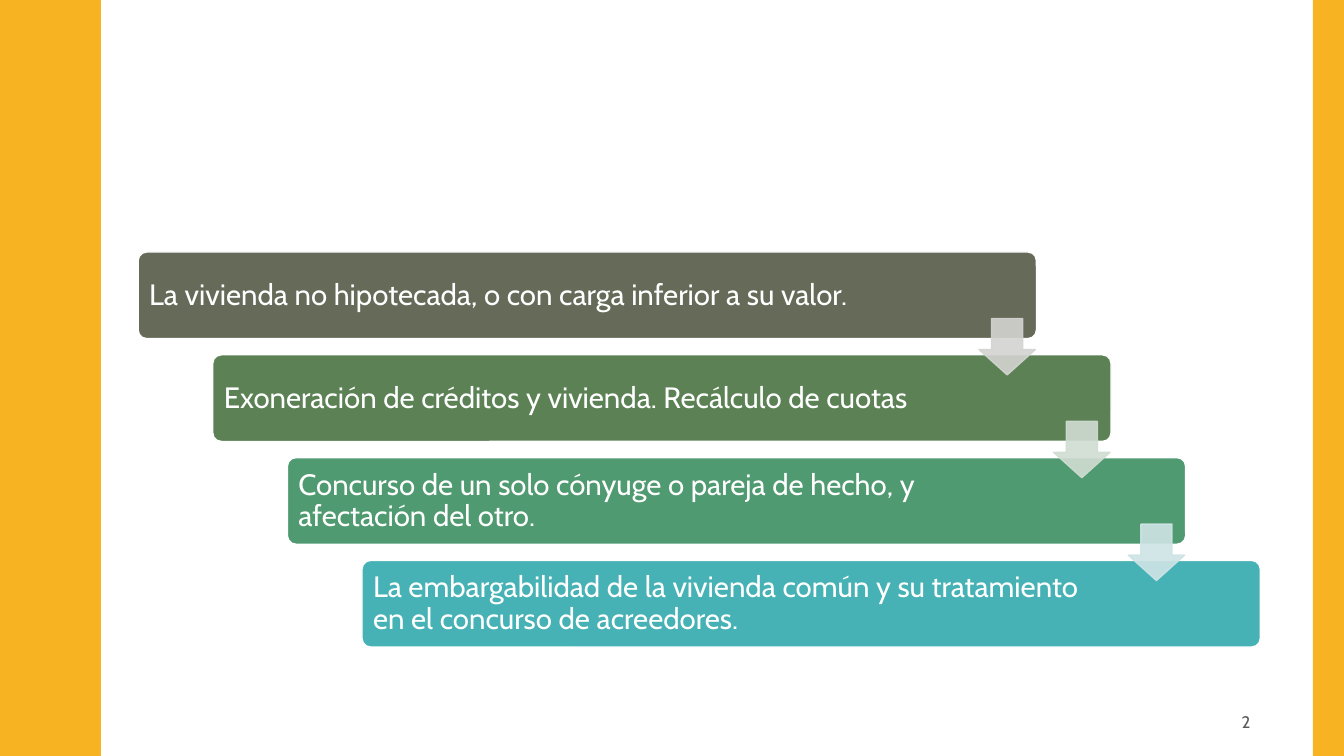
from lxml import etree
from pptx import Presentation
from pptx.dml.color import RGBColor
from pptx.enum.shapes import MSO_SHAPE as Shape
from pptx.enum.text import MSO_ANCHOR as Anchor, PP_ALIGN as Align
from pptx.oxml.ns import qn
from pptx.util import Inches, Pt

GOLD = RGBColor(0xF8, 0xB3, 0x23)
WHITE = RGBColor(0xFF, 0xFF, 0xFF)
GREY = RGBColor(0x59, 0x59, 0x59)
FONT = "Cabin"

# text, text width, bar colour
STEPS = [
    ("La vivienda no hipotecada, o con carga inferior a su valor.",
     7.9, RGBColor(0x65, 0x6A, 0x59)),
    ("Exoneración de créditos y vivienda. Recálculo de cuotas",
     7.55, RGBColor(0x5B, 0x81, 0x55)),
    ("Concurso de un solo cónyuge o pareja de hecho, y afectación del otro.",
     7.56, RGBColor(0x4F, 0x9A, 0x70)),
    ("La embargabilidad de la vivienda común y su tratamiento en el concurso "
     "de acreedores.", 7.55, RGBColor(0x46, 0xB2, 0xB5)),
]
ARROWS = [RGBColor(0xD3, 0xD4, 0xD1), RGBColor(0xD0, 0xDD, 0xD2),
          RGBColor(0xCF, 0xE4, 0xE5)]
LEFT, TOP, DX, DY = 1.37, 2.5, 0.74, 1.02

# Half of one wave; the other half mirrors it
RISE = [(0.78, 0), (0.78, 0.07), (0.79, 0.14), (0.8, 0.2), (0.81, 0.25),
        (0.83, 0.29), (0.85, 0.33), (0.87, 0.38), (0.89, 0.42), (0.91, 0.46),
        (0.93, 0.5), (0.95, 0.55), (0.96, 0.61), (0.97, 0.68), (0.97, 0.75)]
WAVE = 1.5


def add_block(kind, x, y, w, h, fill, edge=None):
    block = slide.shapes.add_shape(
        kind, Inches(x), Inches(y), Inches(w), Inches(h))
    block.shadow.inherit = False
    block.fill.solid()
    block.fill.fore_color.rgb = fill
    if edge is None:
        block.line.fill.background()
    else:
        block.line.color.rgb = edge
        block.line.width = Pt(1)
    return block


def add_label(text, x, y, w, h, size, color):
    box = slide.shapes.add_textbox(Inches(x), Inches(y), Inches(w), Inches(h))
    frame = box.text_frame
    frame.word_wrap = True
    frame.vertical_anchor = Anchor.MIDDLE
    frame.text = text
    font = frame.paragraphs[0].runs[0].font
    font.name, font.size, font.color.rgb = FONT, Pt(size), color
    return frame


prs = Presentation()
prs.slide_width, prs.slide_height = Inches(13.33), Inches(7.5)
slide = prs.slides.add_slide(prs.slide_layouts[6])

# Wavy left edge and plain right edge
fall = [(x, WAVE - y) for x, y in reversed(RISE[:-1])]
edge = [(x, y + i * WAVE) for i in range(5) for x, y in RISE + fall]
pen = slide.shapes.build_freeform(0, 0, scale=Inches(1))
pen.add_line_segments(edge + [(0, 7.5)], close=True)
band = pen.convert_to_shape()
band.shadow.inherit = False
band.fill.solid()
band.fill.fore_color.rgb = GOLD
band.line.fill.background()
add_block(Shape.RECTANGLE, 13.02, 0, 0.31, 7.5, GOLD)

# Staircase of bars
for i, (text, width, color) in enumerate(STEPS):
    x, y = LEFT + i * DX, TOP + i * DY
    bar = add_block(Shape.ROUNDED_RECTANGLE, x, y, 8.91, 0.86, color, WHITE)
    bar.adjustments[0] = 0.1
    frame = add_label(text, x + 0.02, y + 0.03, width, 0.81, 21, WHITE)
    frame.margin_left = frame.margin_right = Inches(0.09)
    frame.margin_top = frame.margin_bottom = Inches(0.09)
    frame.paragraphs[0].line_spacing = 0.9

# Arrows from each bar to the next
for i, color in enumerate(ARROWS):
    arrow = add_block(Shape.DOWN_ARROW, LEFT + 8.34 + i * DX,
                      TOP + 0.66 + i * DY, 0.56, 0.56, color, color)
    arrow.adjustments[0], arrow.adjustments[1] = 0.55, 0.45
    for tint in arrow.element.spPr.iter(qn("a:srgbClr")):
        etree.SubElement(tint, qn("a:alpha")).set("val", "90000")

number = add_label("2", 9.42, 6.97, 3.08, 0.38, 12, GREY)
number.paragraphs[0].alignment = Align.RIGHT

prs.save("out.pptx")
